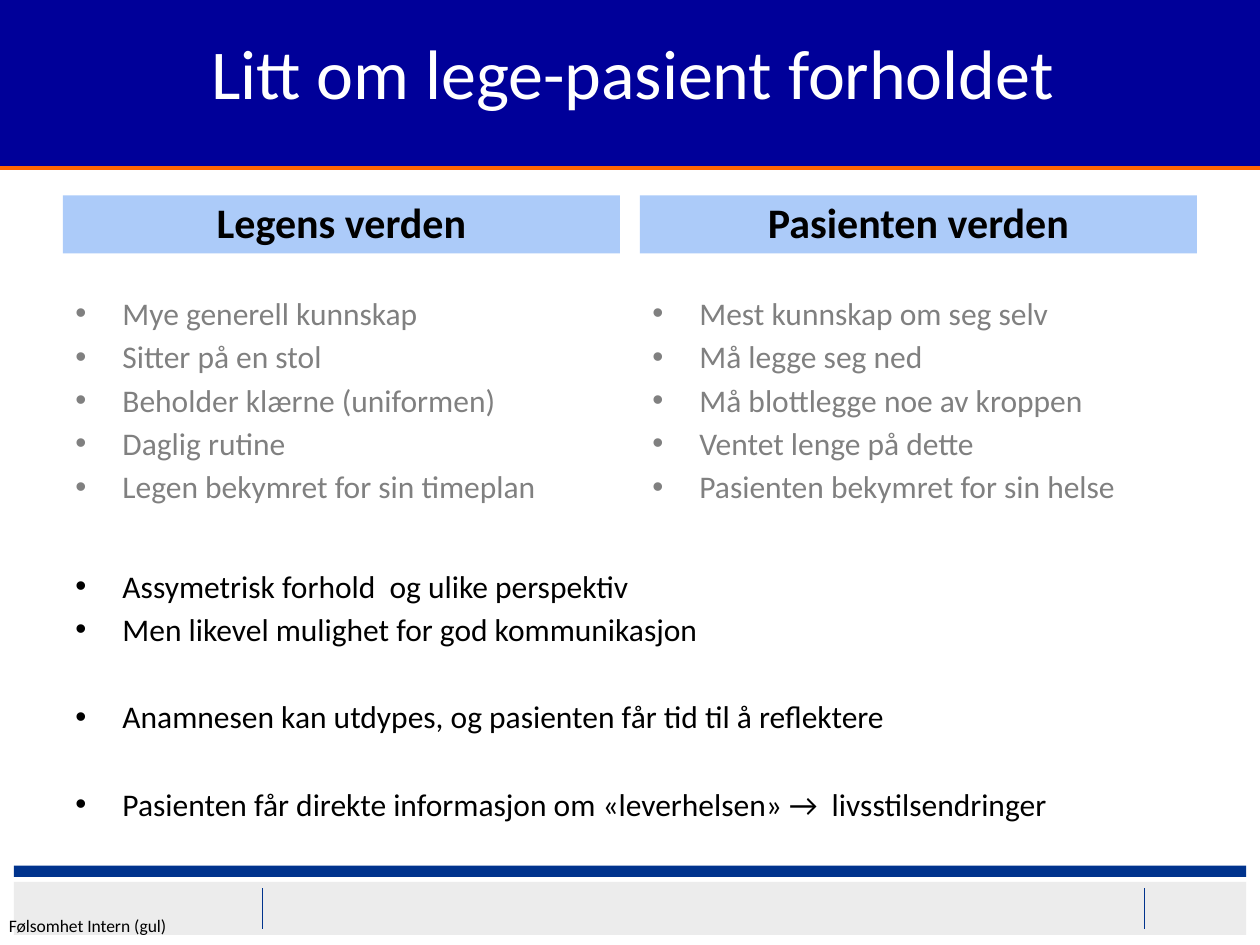
from dataclasses import dataclass
from lxml.etree import SubElement
from pptx import Presentation
from pptx.dml.color import RGBColor as RGB
from pptx.enum.shapes import MSO_CONNECTOR as Conn, MSO_SHAPE as Kind
from pptx.enum.text import MSO_ANCHOR as Anchor, PP_ALIGN as Align
from pptx.oxml.ns import qn
from pptx.util import Cm, Pt


@dataclass(frozen=True)
class Theme:
    font: str = "Calibri"
    navy: str = "000099"
    orange: str = "FF6600"
    blue: str = "00338D"
    sky: str = "ACCBF9"
    pale: str = "ECECEC"
    grey: str = "808080"
    black: str = "000000"
    white: str = "FFFFFF"
    title: float = 40
    head: float = 24
    body: float = 18
    note: float = 10
    gap: float = 3.2
    wide: float = 28.3


LOOK = Theme()
LEFT, WIDTH, STEP = 1.27, 11.23, 11.63

COLUMNS = [
    ("Legens verden", [
        "Mye generell kunnskap",
        "Sitter på en stol",
        "Beholder klærne (uniformen)",
        "Daglig rutine",
        "Legen bekymret for sin timeplan",
    ]),
    ("Pasienten verden", [
        "Mest kunnskap om seg selv",
        "Må legge seg ned",
        "Må blottlegge noe av kroppen",
        "Ventet lenge på dette",
        "Pasienten bekymret for sin helse",
    ]),
]
POINTS = [
    "Assymetrisk forhold  og ulike perspektiv",
    "Men likevel mulighet for god kommunikasjon",
    "Anamnesen kan utdypes, og pasienten får tid til å reflektere",
    "Pasienten får direkte informasjon om «leverhelsen» →  livsstilsendringer",
]


def paint(shape, color):
    shape.fill.solid()
    shape.fill.fore_color.rgb = RGB.from_string(color)


def style(para, size, color, bold=False):
    for run in para.runs:
        font = run.font
        font.name, font.size, font.bold = LOOK.font, Pt(size), bold
        font.color.rgb = RGB.from_string(color)


def add_bar(slide, box, color):
    bar = slide.shapes.add_shape(Kind.RECTANGLE, *map(Cm, box))
    bar.shadow.inherit = False
    paint(bar, color)
    bar.line.fill.background()
    return bar


def add_rule(slide, x, top, end):
    rule = slide.shapes.add_connector(Conn.STRAIGHT, Cm(x), Cm(top), Cm(x), Cm(end))
    rule.line.color.rgb = RGB.from_string(LOOK.blue)
    rule.line.width = Pt(0.25)
    SubElement(rule._element.spPr, qn("a:effectLst"))


def set_title(slide, text):
    title = slide.shapes.title
    title.left, title.top, title.width, title.height = map(Cm, (-0.2, -0.48, 25.9, 3.86))
    paint(title, LOOK.navy)
    title.line.color.rgb = RGB.from_string(LOOK.orange)
    title.line.width = Pt(2.25)
    frame = title.text_frame
    frame.text = text
    frame.vertical_anchor = Anchor.MIDDLE
    para = frame.paragraphs[0]
    para.alignment = Align.CENTER
    style(para, LOOK.title, LOOK.white)


def add_head(slide, x, text):
    frame = add_bar(slide, (x, 3.94, WIDTH, 1.17), LOOK.sky).text_frame
    frame.text = text
    frame.vertical_anchor = Anchor.BOTTOM
    para = frame.paragraphs[0]
    para.alignment = Align.CENTER
    style(para, LOOK.head, LOOK.black, True)


def add_list(slide, box, items, color, apart=()):
    frame = slide.shapes.add_textbox(*map(Cm, box)).text_frame
    frame.word_wrap = True
    frame.text = "\n".join(items)
    for i, para in enumerate(frame.paragraphs):
        props = para._p.get_or_add_pPr()
        props.set("marL", str(Cm(0.95)))
        props.set("indent", str(Cm(-0.95)))
        SubElement(props, qn("a:buFont"), typeface="Arial")
        SubElement(props, qn("a:buChar"), char="•")
        if i:
            para.space_before = Pt(LOOK.wide if i in apart else LOOK.gap)
        style(para, LOOK.body, color)


def add_foot(slide, text):
    add_bar(slide, (0.28, 17.78, 24.84, 1.07), LOOK.pale)
    add_bar(slide, (0.28, 17.45, 24.84, 0.23), LOOK.blue)
    for x in (5.29, 23.07):
        add_rule(slide, x, 17.91, 18.72)
    frame = slide.shapes.add_textbox(*map(Cm, (0.18, 18.44, 3.28, 0.43))).text_frame
    frame.margin_left = frame.margin_right = frame.margin_top = frame.margin_bottom = 0
    frame.text = text
    style(frame.paragraphs[0], LOOK.note, LOOK.black)


def main():
    deck = Presentation()
    deck.slide_width, deck.slide_height = Cm(25.4), Cm(19.05)
    slide = deck.slides.add_slide(deck.slide_layouts[5])
    add_foot(slide, "Følsomhet Intern (gul)")
    set_title(slide, "Litt om lege-pasient forholdet")
    for i, (head, items) in enumerate(COLUMNS):
        x = LEFT + i * STEP
        add_head(slide, x, head)
        add_list(slide, (x, 5.8, WIDTH, 5.2), items, LOOK.grey)
    add_list(slide, (LEFT, 11.3, 24.1, 5.36), POINTS, LOOK.black, apart=(2, 3))
    deck.save("out.pptx")


if __name__ == "__main__":
    main()
